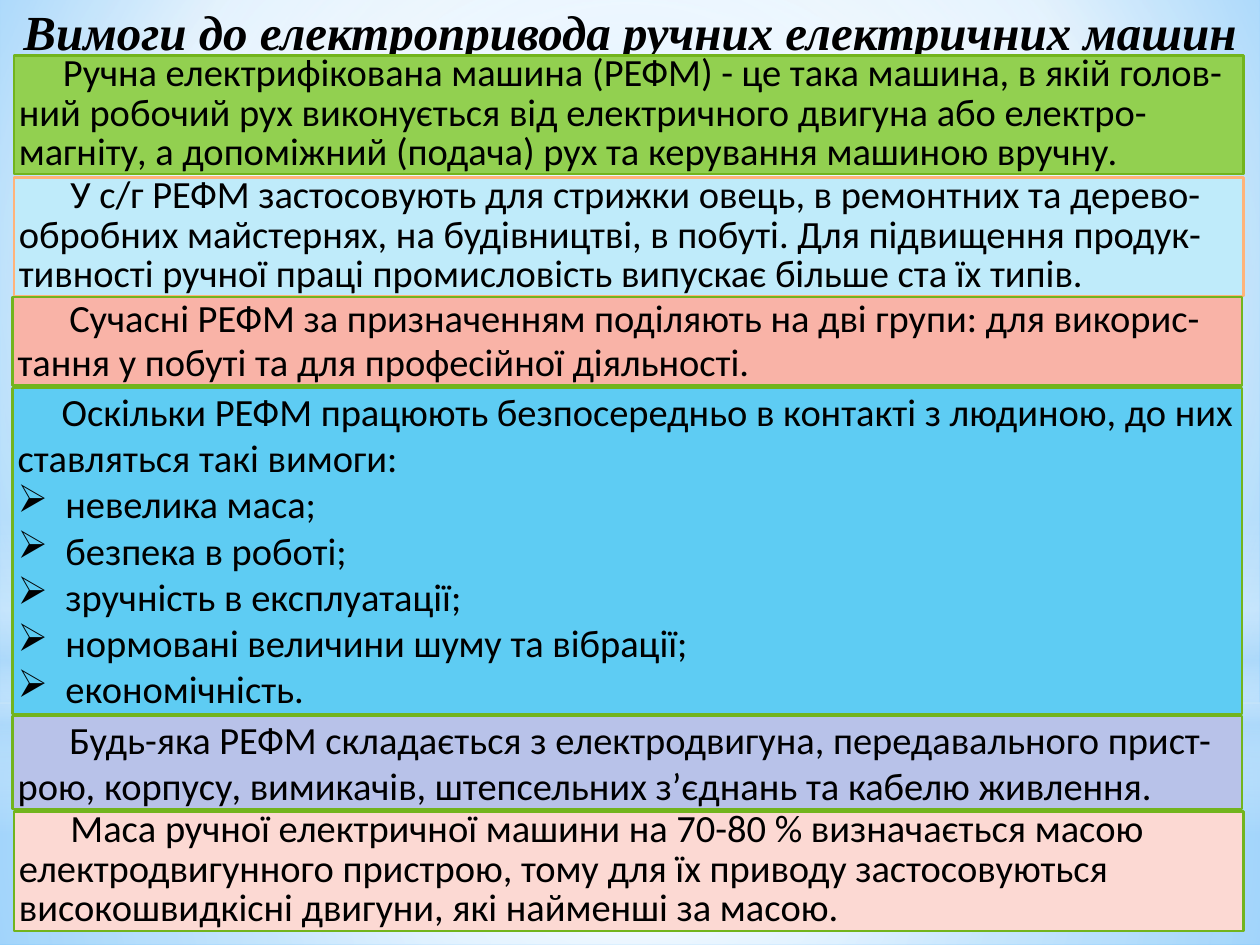
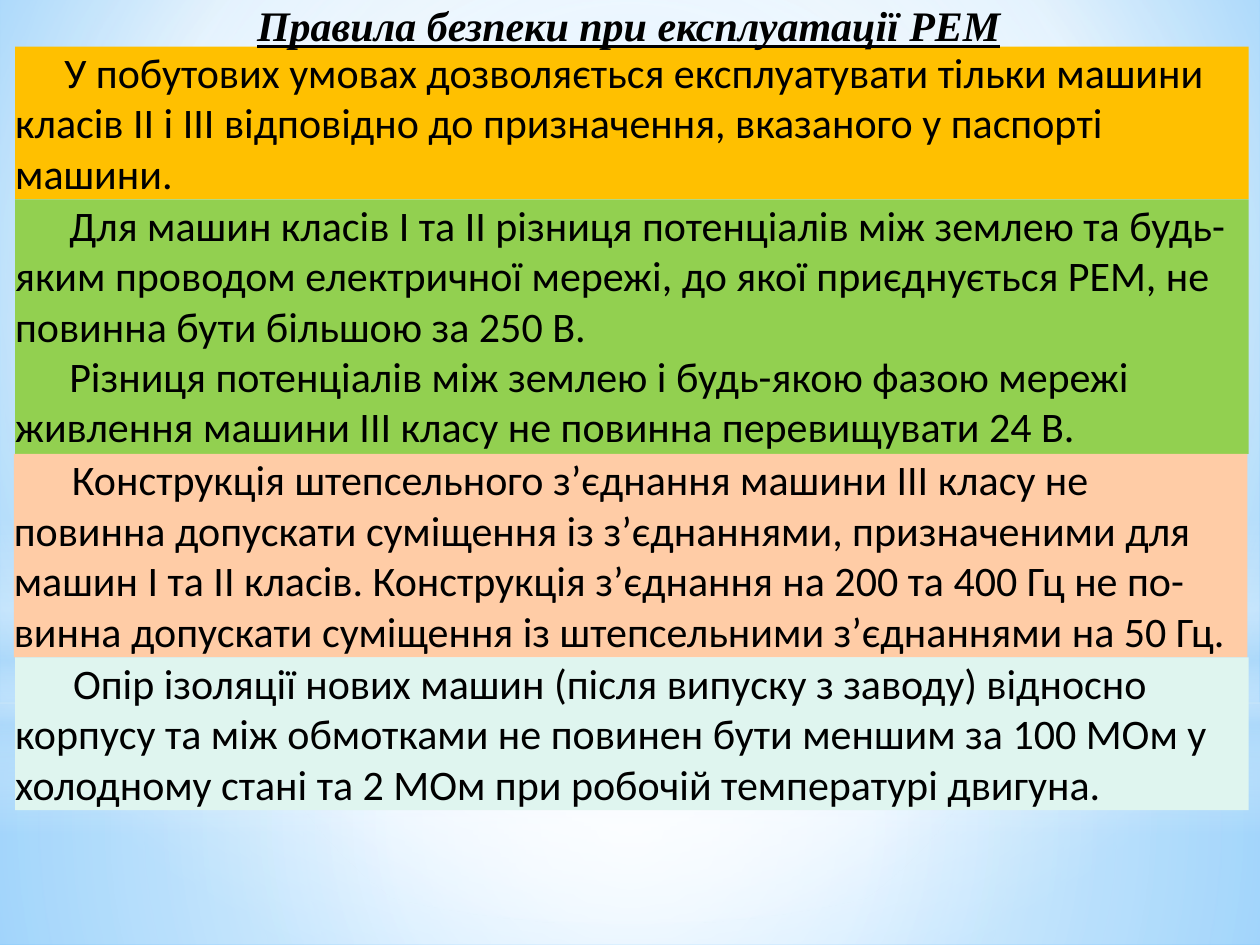
"""Builds two slides on power tools: drive demands and safety rules."""
from pptx import Presentation
from pptx.dml.color import RGBColor
from pptx.enum.shapes import MSO_SHAPE
from pptx.enum.text import MSO_ANCHOR, MSO_AUTO_SIZE, PP_ALIGN
from pptx.oxml import parse_xml
from pptx.oxml.ns import nsdecls, qn
from pptx.util import Inches, Pt

RECT, OVAL = MSO_SHAPE.RECTANGLE, MSO_SHAPE.OVAL
TOP, GROW = MSO_ANCHOR.TOP, MSO_AUTO_SIZE.SHAPE_TO_FIT_TEXT
LEFT, MID = PP_ALIGN.LEFT, PP_ALIGN.CENTER

BLACK = RGBColor(0x00, 0x00, 0x00)
WHITE = RGBColor(0xFF, 0xFF, 0xFF)
HAZE = RGBColor(0xB4, 0xDC, 0xFA)
SKY = RGBColor(0x9E, 0xD5, 0xFF)
BLUE = RGBColor(0x5B, 0xB9, 0xFF)
GREEN = RGBColor(0x92, 0xD0, 0x50)
LEAF = RGBColor(0x72, 0xB4, 0x1D)
ICE = RGBColor(0xBF, 0xEB, 0xFA)
PEACH = RGBColor(0xFF, 0xB3, 0x7A)
CORAL = RGBColor(0xF9, 0xB3, 0xA7)
AZURE = RGBColor(0x5E, 0xCC, 0xF3)
LILAC = RGBColor(0xB8, 0xC2, 0xE9)
BLUSH = RGBColor(0xFC, 0xD9, 0xD3)
GOLD = RGBColor(0xFF, 0xC0, 0x00)
SAND = RGBColor(0xFF, 0xCC, 0xA6)
MINT = RGBColor(0xDF, 0xF5, 0xEF)

deck = Presentation()
deck.slide_width, deck.slide_height = Inches(10), Inches(7.5)
UNIT = deck.slide_width // 100
master, plain = deck.slide_master, deck.slide_layouts[5]


def paint(node, stops, rim):
    marks = "".join(
        f'<a:gs pos="{pos * 1000}"><a:srgbClr val="{hue}">'
        f'<a:alpha val="{alpha * 1000}"/></a:srgbClr></a:gs>'
        for pos, hue, alpha in stops)
    if rim:
        sides = " ".join(f'{side}="{num * 1000}"' for side, num in zip("ltrb", rim))
        shade = f'<a:path path="circle"><a:fillToRect {sides}/></a:path>'
    else:
        shade = '<a:lin ang="5400000" scaled="0"/>'
    solid = node.find(".//" + qn("a:solidFill"))
    solid.getparent().replace(solid, parse_xml(
        f'<a:gradFill {nsdecls("a")} rotWithShape="1">'
        f'<a:gsLst>{marks}</a:gsLst>{shade}</a:gradFill>'))


def write(shape, texts, size, inset=0, indent=0, space=1.0, align=LEFT,
          face="Calibri", items=()):
    frame = shape.text_frame
    frame.word_wrap, frame.auto_size, frame.vertical_anchor = True, GROW, TOP
    frame.margin_left = frame.margin_right = round(inset * UNIT)
    frame.margin_top = frame.margin_bottom = 0
    for num, text in enumerate([*texts, *items]):
        para = frame.paragraphs[0] if num == 0 else frame.add_paragraph()
        para.text, para.alignment, para.line_spacing = text, align, space
        props = para._p.get_or_add_pPr()
        props.set("marL", "0")
        props.set("indent", str(round(indent * UNIT)))
        if text in items:
            props.set("marL", str(round(3.8 * UNIT)))
            props.set("indent", str(round(-3.8 * UNIT)))
            props.append(parse_xml(f'<a:buChar {nsdecls("a")} char="➢"/>'))
        font = para.font
        font.name, font.size, font.color.rgb = face, Pt(size), BLACK
        if align == MID:
            font.bold = font.italic = True


first, second = [deck.slides.add_slide(plain) for _ in range(2)]

master.background.fill.solid()
paint(master.element, [(0, SKY, 100), (60, WHITE, 100), (100, BLUE, 100)],
      (20, 10, 20, 60))
core = (50, 50, 50, 50)
veils = [
    (RECT, 55.8, 19.2, core, [(0, WHITE, 91), (37, WHITE, 76), (100, HAZE, 79)]),
    (RECT, 0, 55.8, core, [(0, WHITE, 89), (48, WHITE, 62), (100, HAZE, 79)]),
    (RECT, 41.2, 25, None, [(0, WHITE, 0), (29, WHITE, 30), (45, HAZE, 40),
                            (55, WHITE, 26), (65, HAZE, 60), (100, WHITE, 0)]),
    (OVAL, 17.5, 55.8, core, [(0, WHITE, 100), (56, WHITE, 0)]),
]
for num, (kind, top, high, rim, stops) in enumerate(veils):
    veil = first.shapes.add_shape(kind, 0, round(top * UNIT), 100 * UNIT,
                                  round(high * UNIT))
    veil.shadow.inherit = False
    veil.fill.solid()
    veil.line.fill.background()
    paint(veil.element, stops, rim)
    veil.element.nvSpPr.cNvPr.set("id", str(50 + num))
    master.shapes.element.insert(2 + num, veil.element)

heads = [
    (first, "Вимоги до електропривода ручних електричних машин", 0.8, 97.6, 4, 28),
    (second, "Правила безпеки при експлуатації РЕМ", 0.6, 97.4, 3.4, 24),
]
for slide, text, top, wide, high, size in heads:
    title = slide.shapes.title
    title.left, title.top = round(1.2 * UNIT), round(top * UNIT)
    title.width, title.height = round(wide * UNIT), round(high * UNIT)
    write(title, [text], size, space=0.85, align=MID, face="Times New Roman")

needs = ["невелика маса;", "безпека в роботі;", "зручність в експлуатації;",
         "нормовані величини шуму та вібрації;", "економічність."]
bands = [
    (1.1, 4.4, 9.4, GREEN, LEAF, 0.85, 3.5, (),
     "Ручна електрифікована машина (РЕФМ) - це така машина, в якій голов-ний "
     "робочий рух виконується від електричного двигуна або електро-магніту, "
     "а допоміжний (подача) рух та керування машиною вручну."),
    (1.1, 14.1, 9.4, ICE, PEACH, 0.85, 4.1, (),
     "У с/г РЕФМ застосовують для стрижки овець, в ремонтних та "
     "дерево-обробних майстернях, на будівництві, в побуті. Для підвищення "
     "продук-тивності ручної праці промисловість випускає більше ста їх типів."),
    (1, 23.6, 7, CORAL, LEAF, 0.95, 4.1, (),
     "Сучасні РЕФМ за призначенням поділяють на дві групи: для "
     "викорис-тання у побуті та для професійної діяльності."),
    (1, 30.8, 25.9, AZURE, LEAF, 1.0, 3.5, needs,
     "Оскільки РЕФМ працюють безпосередньо в контакті з людиною, до них "
     "ставляться такі вимоги:"),
    (1, 56.8, 7.4, LILAC, LEAF, 1.0, 4.1, (),
     "Будь-яка РЕФМ складається з електродвигуна, передавального "
     "прист-рою, корпусу, вимикачів, штепсельних з’єднань та кабелю живлення."),
    (1.1, 64.4, 9.5, BLUSH, LEAF, 0.85, 4.1, (),
     "Маса ручної електричної машини на 70-80 % визначається масою "
     "електродвигунного пристрою, тому для їх приводу застосовуються "
     "високошвидкісні двигуни, які найменші за масою."),
]
for left, top, high, hue, edge, space, indent, items, text in bands:
    band = first.shapes.add_shape(RECT, round(left * UNIT), round(top * UNIT),
                                  round(97.6 * UNIT), round(high * UNIT))
    band.shadow.inherit = False
    band.fill.solid()
    band.fill.fore_color.rgb = hue
    band.line.color.rgb, band.line.width = edge, Pt(1.25)
    write(band, [text], 22, 0.4, indent, space, items=items)

rules = [
    (1.2, 3, GOLD, 3.9, [
        "У побутових умовах дозволяється експлуатувати тільки машини класів "
        "II і III відповідно до призначення, вказаного у паспорті машини."]),
    (1.2, 5, GREEN, 4.3, [
        "Для машин класів І та II різниця потенціалів між землею та будь-яким "
        "проводом електричної мережі, до якої приєднується РЕМ, не повинна "
        "бути більшою за 250 В.",
        "Різниця потенціалів між землею і будь-якою фазою мережі живлення "
        "машини III класу не повинна перевищувати 24 В."]),
    (1.1, 4, SAND, 4.6, [
        "Конструкція штепсельного з’єднання машини III класу не повинна "
        "допускати суміщення із з’єднаннями, призначеними для машин І та II "
        "класів. Конструкція з’єднання на 200 та 400 Гц не по-винна "
        "допускати суміщення із штепсельними з’єднаннями на 50 Гц."]),
    (1.2, 3, MINT, 4.6, [
        "Опір ізоляції нових машин (після випуску з заводу) відносно корпусу "
        "та між обмотками не повинен бути меншим за 100 МОм у холодному стані "
        "та 2 МОм при робочій температурі двигуна."]),
]
top = 3.7
for left, lines, hue, indent, texts in rules:
    high = lines * 4.04
    rule = second.shapes.add_shape(RECT, round(left * UNIT), round(top * UNIT),
                                   round(97.9 * UNIT), round(high * UNIT))
    rule.shadow.inherit = False
    rule.fill.solid()
    rule.fill.fore_color.rgb = hue
    rule.line.fill.background()
    write(rule, texts, 24, indent=indent)
    top += high

title = second.shapes.title
title.text_frame.paragraphs[0].font.underline = True
second.shapes.element.append(title.element)

deck.save("out.pptx")
